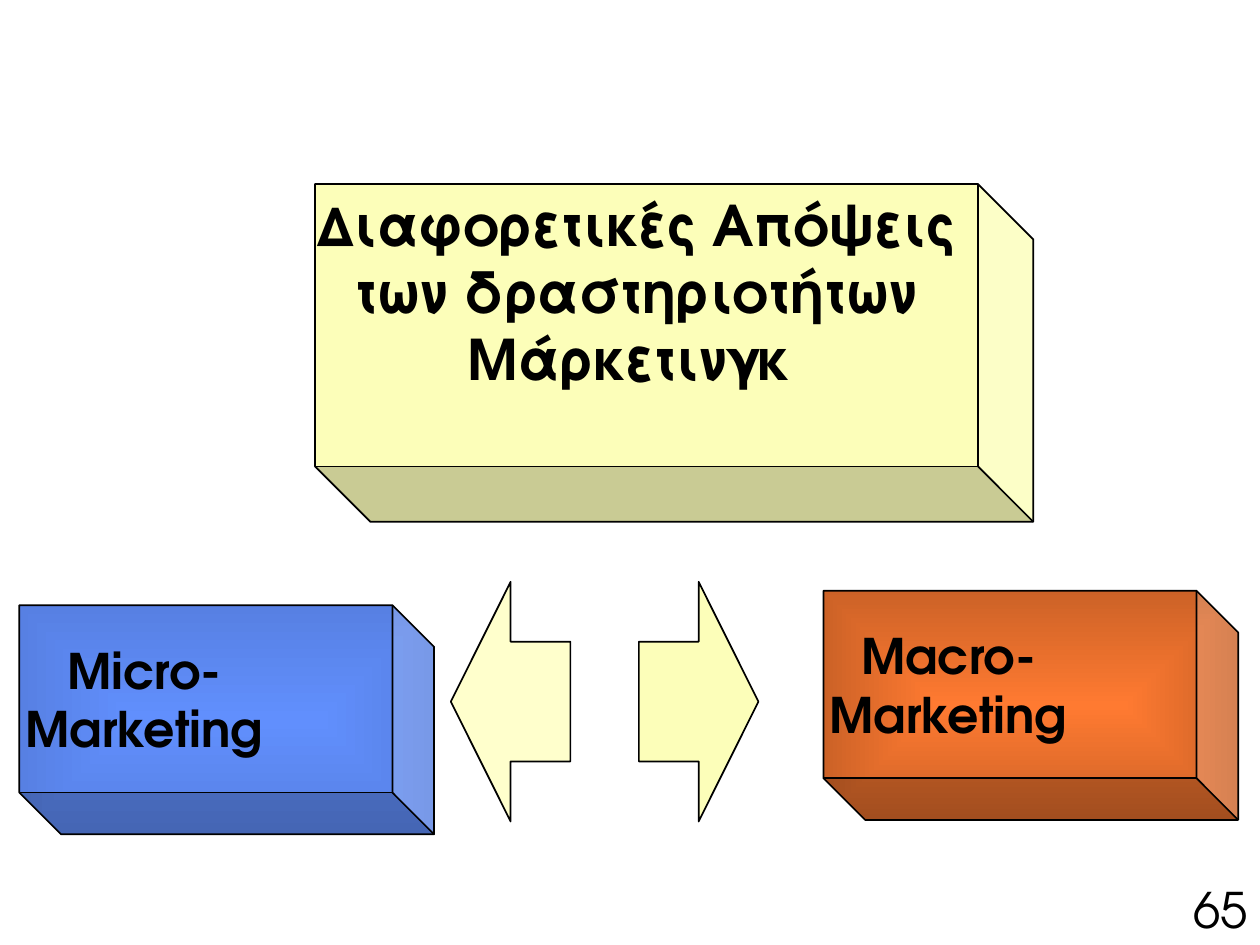
from lxml import etree
from pptx import Presentation
from pptx.dml.color import RGBColor
from pptx.enum.shapes import MSO_SHAPE
from pptx.enum.text import MSO_ANCHOR, PP_ALIGN
from pptx.oxml.ns import qn
from pptx.util import Cm, Pt

CUBE, ARROW = MSO_SHAPE.CUBE, MSO_SHAPE.RIGHT_ARROW
TOP, MIDDLE = MSO_ANCHOR.TOP, MSO_ANCHOR.MIDDLE
CENTER = PP_ALIGN.CENTER
FONT = "TeX Gyre Adventor"
COLORS = {
    "ink": "000000",
    "cream": "FCFEB9",
    "pale": "FFFFCC",
    "blue": "618FFD",
    "blue_edge": "5780E3",
    "orange": "FF7A31",
    "orange_edge": "CC6227",
}


def color(name):
    return RGBColor.from_string(COLORS[name])


def write(shape, lines, size=28, bold=True, anchor=TOP, wrap=False,
          margins=(0.25, 0.13), spacing=None):
    """Fill a shape with centred paragraphs."""
    frame = shape.text_frame
    frame.word_wrap = wrap
    frame.vertical_anchor = anchor
    frame.margin_left = frame.margin_right = Cm(margins[0])
    frame.margin_top = frame.margin_bottom = Cm(margins[1])
    frame.text = "\n".join(lines)
    for paragraph in frame.paragraphs:
        paragraph.alignment = CENTER
        paragraph.line_spacing = spacing
        font = paragraph.runs[0].font
        font.name, font.size, font.bold = FONT, Pt(size), bold
        font.color.rgb = color("ink")


def paint(shape, center, edge=None):
    """Outline a shape; fill it plainly, or from the centre to the edge."""
    shape.shadow.inherit = False
    shape.line.color.rgb = color("ink")
    shape.line.width = Pt(1)
    if edge is None:
        shape.fill.solid()
        shape.fill.fore_color.rgb = color(center)
        return
    shape.fill.gradient()
    for stop, name in zip(shape.fill.gradient_stops, (center, edge)):
        stop.color.rgb = color(name)
    gradient = shape._element.spPr.find(qn("a:gradFill"))
    gradient.remove(gradient.find(qn("a:lin")))
    path = etree.SubElement(gradient, qn("a:path"), path="rect")
    etree.SubElement(path, qn("a:fillToRect"),
                     dict.fromkeys("ltrb", "50000"))


def add_block(slide, box, lines, depth, fill, **text_format):
    """Cube turned a quarter so its depth runs down and right; text upright."""
    left, top, width, height = box
    shift = (width - height) / 2
    block = slide.shapes.add_shape(CUBE, Cm(left + shift), Cm(top - shift),
                                   Cm(height), Cm(width))
    block.rotation = 90
    block.adjustments[0] = depth
    paint(block, *fill)
    write(block, lines, **text_format)
    body = block.text_frame._txBody.bodyPr
    body.set("vert", "eaVert")
    body.set("rot", "10800000")


def add_arrow(slide, box, fill, to_left=False):
    arrow = slide.shapes.add_shape(ARROW, *map(Cm, box))
    paint(arrow, fill)
    if to_left:
        arrow._element.spPr.xfrm.set("flipH", "1")


def add_page_number(slide, box, number):
    page = slide.shapes.add_textbox(*map(Cm, box))
    write(page, [number], bold=False, spacing=0.9)


def main():
    prs = Presentation()
    prs.slide_width, prs.slide_height = Cm(25.4), Cm(19.05)
    slide = prs.slides.add_slide(prs.slide_layouts[6])

    # Left branch
    add_arrow(slide, (9.09, 11.73, 2.41, 4.83), "pale", to_left=True)
    add_block(slide, (0.39, 12.2, 8.36, 4.62), ["Micro-", "Marketing"], 0.182,
              ("blue", "blue_edge"), anchor=MIDDLE)

    # Heading block
    add_block(slide, (6.35, 3.71, 14.48, 6.81),
              ["Διαφορετικές Απόψεις των δραστηριοτήτων Μάρκετινγκ "], 0.164,
              ("cream",), size=32, wrap=True, margins=(0.13, 0.05))

    # Right branch
    add_block(slide, (16.6, 11.91, 8.36, 4.62), ["Macro-", "Marketing"], 0.182,
              ("orange", "orange_edge"), anchor=MIDDLE)
    add_arrow(slide, (12.88, 11.73, 2.41, 4.83), "cream")

    add_page_number(slide, (23.52, 17.73, 2.16, 1.32), "65")
    prs.save("out.pptx")


if __name__ == "__main__":
    main()
